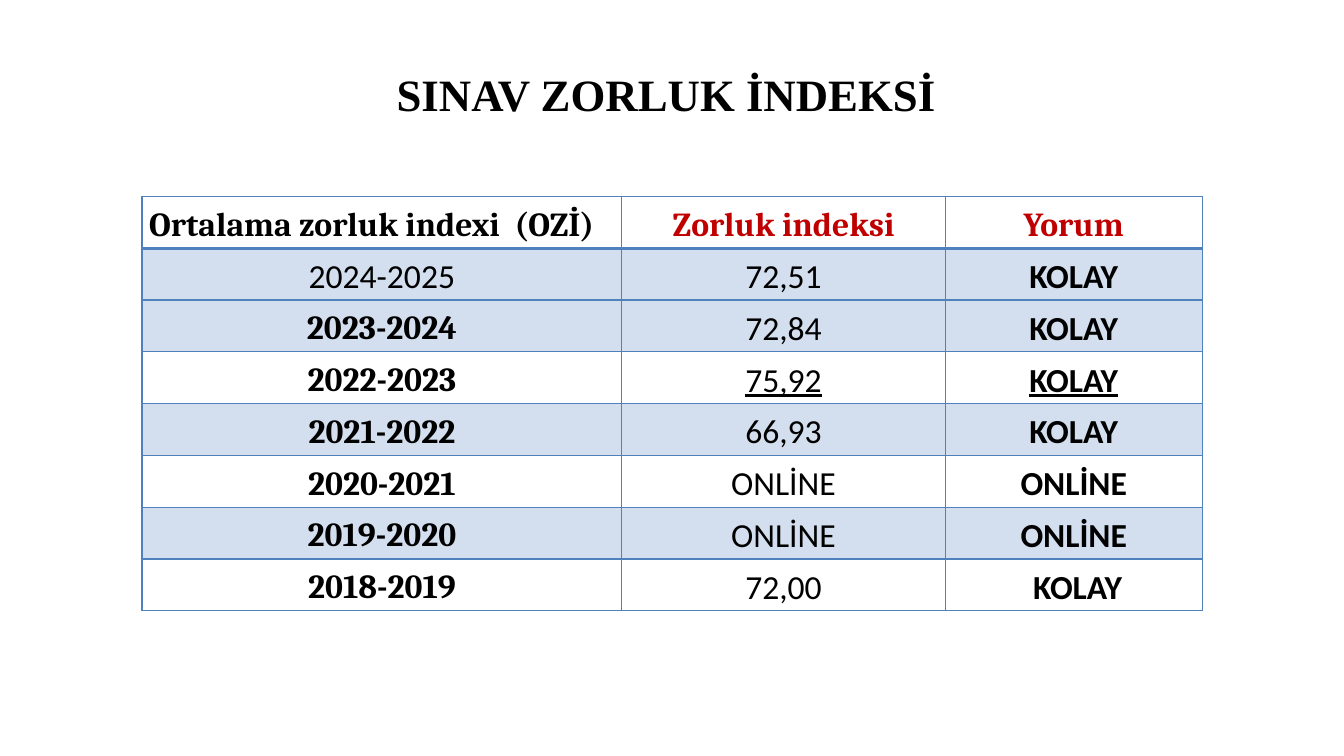
"""Build the slide with the table of exam difficulty by year."""
from dataclasses import dataclass

from lxml.etree import SubElement
from pptx import Presentation
from pptx.dml.color import RGBColor
from pptx.enum.text import MSO_ANCHOR, PP_ALIGN
from pptx.oxml.ns import qn
from pptx.util import Cm, Pt


@dataclass(frozen=True)
class Theme:
    black: str = "000000"
    red: str = "C00000"
    band: str = "D3DFEE"
    line: str = "4F81BD"
    title: int = 32
    body: int = 24
    thin: float = 1
    thick: float = 2.25
    serif: str = "Cambria"
    sans: str = "Calibri"
    roman: str = "Times New Roman"


@dataclass(frozen=True)
class Year:
    name: str
    score: str
    note: str
    band: bool = False
    under: bool = False


THEME = Theme()
HEAD = (
    ("Ortalama zorluk indexi  (OZİ)", THEME.black, PP_ALIGN.LEFT),
    ("Zorluk indeksi", THEME.red, PP_ALIGN.CENTER),
    ("Yorum", THEME.red, PP_ALIGN.CENTER),
)
YEARS = (
    Year("2024-2025", "72,51", "KOLAY", band=True),
    Year("2023-2024", "72,84", "KOLAY", band=True),
    Year("2022-2023", "75,92", "KOLAY", under=True),
    Year("2021-2022", "66,93", "KOLAY", band=True),
    Year("2020-2021", "ONLİNE", "ONLİNE"),
    Year("2019-2020", "ONLİNE", "ONLİNE", band=True),
    Year("2018-2019", "72,00", " KOLAY"),
)
WIDTHS = (12.09, 8.15, 6.48)
HEIGHT = 10.44
THICK = (1, 2)


def write(frame, text: str, *, font: str, size: int = THEME.body,
          color: str = THEME.black, bold: bool = True, under: bool = False,
          align=PP_ALIGN.CENTER, lead: float | None = None,
          after: int | None = None) -> None:
    frame.vertical_anchor = MSO_ANCHOR.MIDDLE
    para = frame.paragraphs[0]
    para.alignment = align
    if lead is not None:
        para.line_spacing = lead
    if after is not None:
        para.space_after = Pt(after)
    run = para.add_run()
    run.text = text
    face = run.font
    face.name, face.size, face.bold = font, Pt(size), bold
    face.color.rgb = RGBColor.from_string(color)
    if under:
        face.underline = True


def edge(cell, top: float, base: float) -> None:
    props = cell._tc.get_or_add_tcPr()
    sides = {"L": THEME.thin, "R": THEME.thin, "T": top, "B": base}
    for spot, (side, width) in enumerate(sides.items()):
        line = SubElement(props, qn(f"a:ln{side}"), w=str(int(Pt(width))))
        fill = SubElement(line, qn("a:solidFill"))
        SubElement(fill, qn("a:srgbClr"), val=THEME.line)
        props.insert(spot, line)


def style(cell, row: int, band: bool) -> None:
    cell.margin_left = cell.margin_right = Cm(0.18)
    cell.margin_top = cell.margin_bottom = 0
    cell.vertical_anchor = MSO_ANCHOR.MIDDLE
    if band:
        cell.fill.solid()
        cell.fill.fore_color.rgb = RGBColor.from_string(THEME.band)
    else:
        cell.fill.background()
    top, base = (THEME.thick if rule in THICK else THEME.thin
                 for rule in (row, row + 1))
    edge(cell, top, base)


def fill_head(table) -> None:
    for col, (text, color, align) in enumerate(HEAD):
        cell = table.cell(0, col)
        style(cell, 0, False)
        write(cell.text_frame, text, font=THEME.serif, color=color,
              align=align, lead=1.15, after=10)


def fill_year(table, row: int, year: Year) -> None:
    first = row == 1
    parts = (
        (year.name, THEME.sans if first else THEME.serif, not first, False),
        (year.score, THEME.sans, False, year.under),
        (year.note, THEME.sans, True, year.under),
    )
    for col, (text, font, bold, under) in enumerate(parts):
        cell = table.cell(row, col)
        style(cell, row, year.band)
        write(cell.text_frame, text, font=font, bold=bold, under=under,
              lead=1.15, after=10)


def main() -> None:
    deck = Presentation()
    deck.slide_width, deck.slide_height = Cm(33.87), Cm(19.05)
    slide = deck.slides.add_slide(deck.slide_layouts[5])
    title = slide.shapes.title
    title.left, title.top = Cm(1.69), Cm(0.76)
    title.width, title.height = Cm(30.48), Cm(3.18)
    write(title.text_frame, "SINAV ZORLUK İNDEKSİ ", font=THEME.roman,
          size=THEME.title)

    count = len(YEARS) + 1
    table = slide.shapes.add_table(count, len(HEAD), Cm(3.58), Cm(4.95),
                                   Cm(sum(WIDTHS)), Cm(HEIGHT)).table
    table.first_row = table.horz_banding = False
    for col, width in zip(table.columns, WIDTHS):
        col.width = Cm(width)
    fill_head(table)
    for row, year in enumerate(YEARS, 1):
        fill_year(table, row, year)
    deck.save("out.pptx")


if __name__ == "__main__":
    main()
